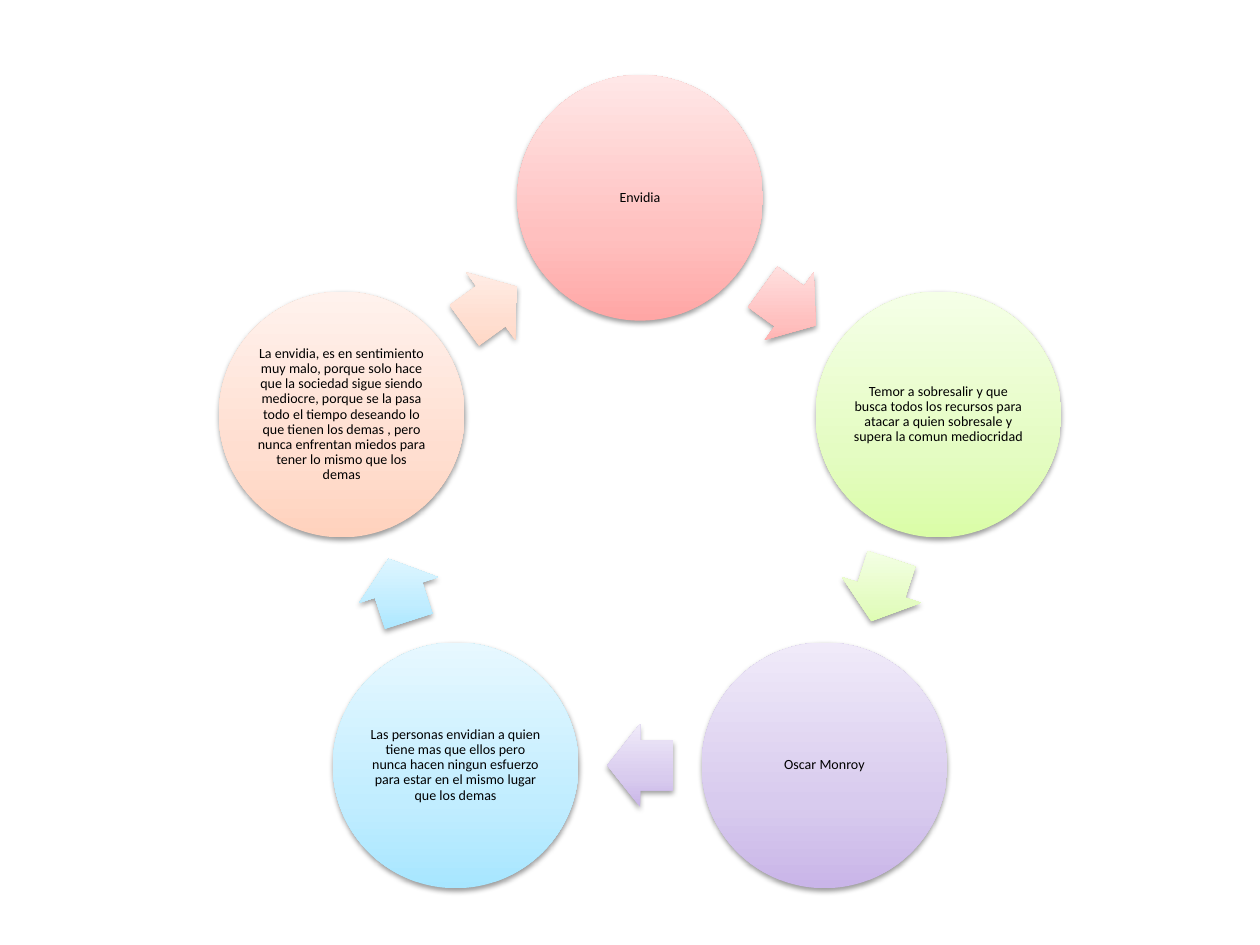
import math

from lxml import etree
from pptx import Presentation
from pptx import util as u
from pptx.dml.color import RGBColor
from pptx.enum import shapes, text
from pptx.oxml import parse_xml
from pptx.oxml.ns import nsdecls, qn

WIDE, HIGH = 10, 7.5
MID_X, MID_Y, RING = 5.08, 4.06, 2.49
DISC = 1.95
ARROW = (0.52, 0.66)
STEPS = [
    ("Envidia", ("FFA6A5", "FFC0BF", "FFE7E7")),
    ("Temor a sobresalir y que busca todos los recursos para atacar a quien "
     "sobresale y supera la comun mediocridad", ("DAFDA7", "E4FCC2", "F5FFE7")),
    ("Oscar Monroy", ("C9B5E8", "D8CBEE", "F0EAF9")),
    ("Las personas envidian a quien tiene mas que ellos pero nunca hacen "
     "ningun esfuerzo para estar en el mismo lugar que los demas",
     ("A7E6FF", "C1EDFF", "E7F8FF")),
    ("La envidia, es en sentimiento muy malo, porque solo hace que la sociedad "
     "sigue siendo mediocre, porque se la pasa todo el tiempo deseando lo que "
     "tienen los demas , pero nunca enfrentan miedos para tener lo mismo que "
     "los demas", ("FFD2BD", "FFDED0", "FFF2ED")),
]


def style(item, **values):
    for name, value in values.items():
        setattr(item, name, value)


def shade(shape, tones):
    """Fill from bottom to top of the page, whatever the turn of the shape."""
    stops = "".join(
        f'<a:gs pos="{place * 1000}"><a:srgbClr val="{tone}"/></a:gs>'
        for place, tone in zip((0, 35, 100), tones))
    props = shape.fill._xPr
    shape.fill.background()
    old = props.find(qn("a:noFill"))
    props.replace(old, parse_xml(
        f'<a:gradFill {nsdecls("a")} rotWithShape="0"><a:gsLst>{stops}</a:gsLst>'
        '<a:lin ang="16200000" scaled="0"/></a:gradFill>'))


def drop(shape):
    """Give the shape a soft shadow just below it."""
    shape.shadow.inherit = False
    effects = shape._element.spPr.find(qn("a:effectLst"))
    cast = etree.SubElement(effects, qn("a:outerShdw"), blurRad="40000",
                            dist="20000", dir="5400000", rotWithShape="0")
    tone = etree.SubElement(cast, qn("a:srgbClr"), val="000000")
    etree.SubElement(tone, qn("a:alpha"), val="38000")


def place(slide, kind, angle, radius, size, tones):
    """Centre a shape on the ring, at degrees clockwise from the top."""
    turn = math.radians(angle)
    x = MID_X + radius * math.sin(turn)
    y = MID_Y - radius * math.cos(turn)
    wide, high = size
    shape = slide.shapes.add_shape(
        kind, u.Inches(x - wide / 2), u.Inches(y - high / 2),
        u.Inches(wide), u.Inches(high))
    shape.line.fill.background()
    shade(shape, tones)
    drop(shape)
    return shape


def write(shape, words):
    frame = shape.text_frame
    edge = u.Inches(0.01)
    style(frame, word_wrap=True, vertical_anchor=text.MSO_ANCHOR.MIDDLE,
          margin_left=edge, margin_right=edge, margin_top=edge,
          margin_bottom=edge)
    para = frame.paragraphs[0]
    style(para, text=words, alignment=text.PP_ALIGN.CENTER, line_spacing=0.9)
    font = para.runs[0].font
    style(font, name="Calibri", size=u.Pt(8))
    font.color.rgb = RGBColor.from_string("000000")


def main():
    deck = Presentation()
    style(deck, slide_width=u.Inches(WIDE), slide_height=u.Inches(HIGH))
    slide = deck.slides.add_slide(deck.slide_layouts[6])
    kinds = shapes.MSO_SHAPE
    gap = 360 / len(STEPS)
    inner = RING * math.cos(math.radians(gap / 2))
    for i, (words, tones) in enumerate(STEPS):
        disc = place(slide, kinds.OVAL, i * gap, RING, (DISC, DISC), tones)
        write(disc, words)
        way = (i + 0.5) * gap
        arrow = place(slide, kinds.RIGHT_ARROW, way, inner, ARROW, tones)
        arrow.rotation = way
        arrow.adjustments[0] = 0.6
        arrow.adjustments[1] = 0.5
    deck.save("out.pptx")


if __name__ == "__main__":
    main()
